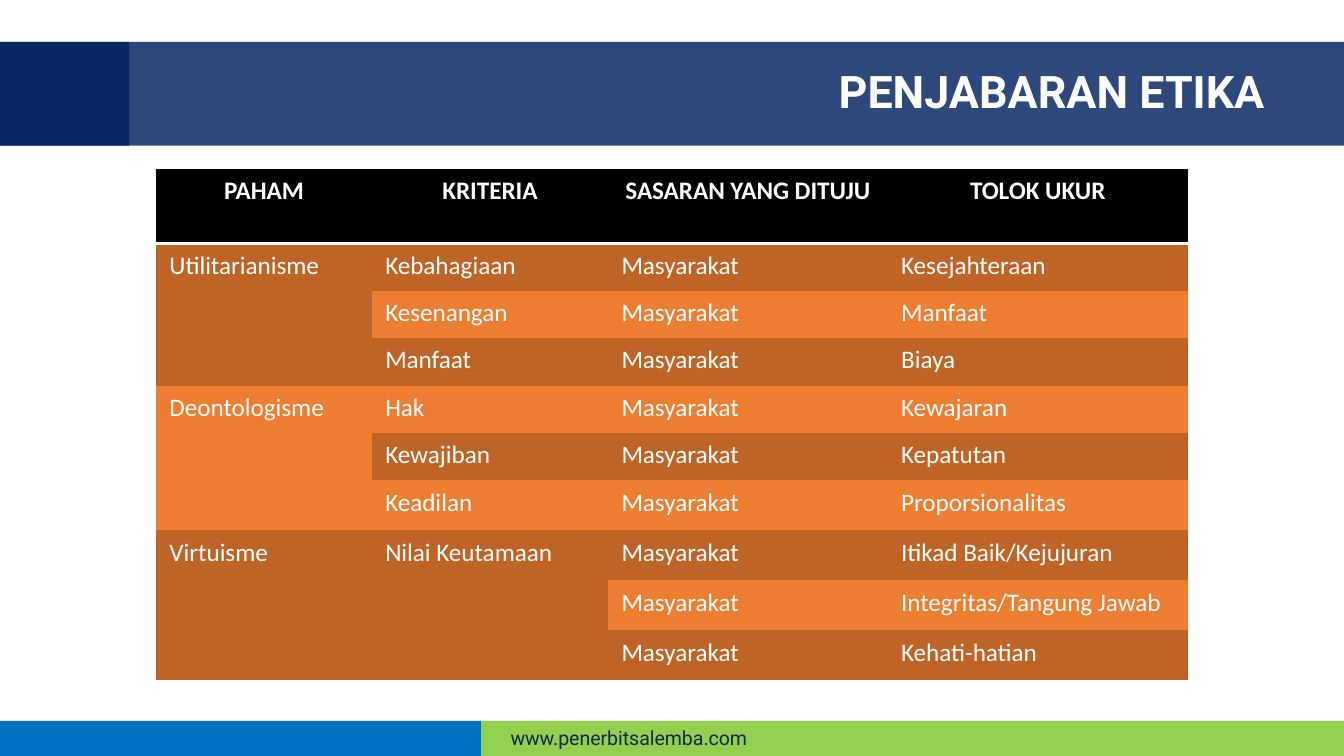
from typing import NamedTuple

from lxml.etree import SubElement
from pptx import Presentation
from pptx.dml.color import RGBColor
from pptx.enum.shapes import MSO_SHAPE as Shape
from pptx.enum.text import MSO_ANCHOR as Anchor, PP_ALIGN as Align
from pptx.oxml import parse_xml
from pptx.oxml.ns import nsdecls, qn
from pptx.util import Pt

NAVY, WHITE = "002060", "FFFFFF"
DARK_ORANGE, ORANGE = "BE6427", "ED7D31"
NO_STYLE = "{2D5ABB26-0587-4C30-8999-92F81FD0307C}"


class Bar(NamedTuple):
    left: float
    top: float
    width: float
    height: float
    color: str
    opacity: int = 100


class Merge(NamedTuple):
    column: int
    first_row: int
    last_row: int


BARS = [
    Bar(0, 22.4, 720, 55.6, NAVY, 82),
    Bar(0, 22.4, 69.2, 55.6, NAVY, 82),
    Bar(0, 386.2, 257.8, 18.8, "0070C0"),
    Bar(257.8, 386.2, 462.2, 18.8, "92D050"),
]

HEADINGS = ["PAHAM", "KRITERIA", "SASARAN YANG DITUJU", "TOLOK UKUR"]
TARGET = "Masyarakat"
ETHICS = [
    ("Utilitarianisme", "Kebahagiaan", TARGET, "Kesejahteraan"),
    ("", "Kesenangan", TARGET, "Manfaat"),
    ("", "Manfaat", TARGET, "Biaya"),
    ("Deontologisme", "Hak", TARGET, "Kewajaran"),
    ("", "Kewajiban", TARGET, "Kepatutan"),
    ("", "Keadilan", TARGET, "Proporsionalitas"),
    ("Virtuisme", "Nilai Keutamaan", TARGET, "Itikad Baik/Kejujuran"),
    ("", "", TARGET, "Integritas/Tangung Jawab"),
    ("", "", TARGET, "Kehati-hatian"),
]
MERGES = [Merge(0, 1, 3), Merge(0, 4, 6), Merge(0, 7, 9), Merge(1, 7, 9)]
COLUMN_WIDTHS = [115.6, 126.6, 149.8, 160.8]
ROW_HEIGHTS = [39.8] + [25.4] * 5 + [26.8] * 4


def paint(fill, color: str) -> None:
    fill.solid()
    fill.fore_color.rgb = RGBColor.from_string(color)


def write(frame, text: str, *, size: float, font: str, color: str = WHITE,
          bold: bool = False, align=Align.LEFT, spacing: float = 1.0) -> None:
    frame.word_wrap = True
    paragraph = frame.paragraphs[0]
    paragraph.alignment = align
    paragraph.line_spacing = spacing
    paragraph.space_before = Pt(0)
    run = paragraph.add_run()
    run.text = text
    run.font.size, run.font.name, run.font.bold = Pt(size), font, bold
    paint(run.font.fill, color)


def draw_bar(slide, bar: Bar) -> None:
    shape = slide.shapes.add_shape(
        Shape.RECTANGLE, Pt(bar.left), Pt(bar.top), Pt(bar.width), Pt(bar.height))
    shape.shadow.inherit = False
    shape.line.fill.background()
    paint(shape.fill, bar.color)
    if bar.opacity < 100:
        color = shape.fill._xPr.find(qn("a:solidFill"))[0]
        SubElement(color, qn("a:alpha")).set("val", str(bar.opacity * 1000))


def underline_cell(cell, color: str, width: float) -> None:
    border = parse_xml(
        f'<a:lnB {nsdecls("a")} w="{Pt(width)}"><a:solidFill>'
        f'<a:srgbClr val="{color}"/></a:solidFill></a:lnB>')
    cell._tc.get_or_add_tcPr().insert(0, border)


def draw_table(slide, left: float, top: float) -> None:
    rows = [HEADINGS, *ETHICS]
    frame = slide.shapes.add_table(
        len(rows), len(HEADINGS), Pt(left), Pt(top),
        Pt(sum(COLUMN_WIDTHS)), Pt(sum(ROW_HEIGHTS)))
    table = frame.table
    table._tbl.tblPr.find(qn("a:tableStyleId")).text = NO_STYLE
    for column, width in zip(table.columns, COLUMN_WIDTHS):
        column.width = Pt(width)
    for row, height in zip(table.rows, ROW_HEIGHTS):
        row.height = Pt(height)

    for r, row in enumerate(rows):
        header = r == 0
        band = DARK_ORANGE if r % 2 else ORANGE
        for c, text in enumerate(row):
            cell = table.cell(r, c)
            paint(cell.fill, "000000" if header else band)
            if header:
                underline_cell(cell, WHITE, 2)
            if text:
                write(cell.text_frame, text, size=13.5, font="Calibri", bold=header,
                      align=Align.CENTER if header else Align.LEFT)

    for merge in MERGES:
        table.cell(merge.first_row, merge.column).merge(
            table.cell(merge.last_row, merge.column))


def main() -> None:
    deck = Presentation()
    deck.slide_width, deck.slide_height = Pt(720), Pt(405)
    slide = deck.slides.add_slide(deck.slide_layouts[5])

    # Header and footer bars
    for bar in BARS:
        draw_bar(slide, bar)

    # Web address in the footer
    address = slide.shapes.add_textbox(Pt(266.4), Pt(385.2), Pt(148.4), Pt(20))
    write(address.text_frame, "www.penerbitsalemba.com",
          size=10.5, font="Roboto", color="17264A")

    # Title, raised above the header bars
    title = slide.shapes.title
    title.left, title.top = Pt(119.6), Pt(22.4)
    title.width, title.height = Pt(565), Pt(55.6)
    title.text_frame.vertical_anchor = Anchor.MIDDLE
    write(title.text_frame, "PENJABARAN ETIKA", size=24, font="Roboto",
          bold=True, align=Align.RIGHT, spacing=0.9)
    slide.shapes._spTree.append(title._element)

    # Ethics table
    draw_table(slide, 83.6, 90.6)

    deck.save("out.pptx")


if __name__ == "__main__":
    main()
